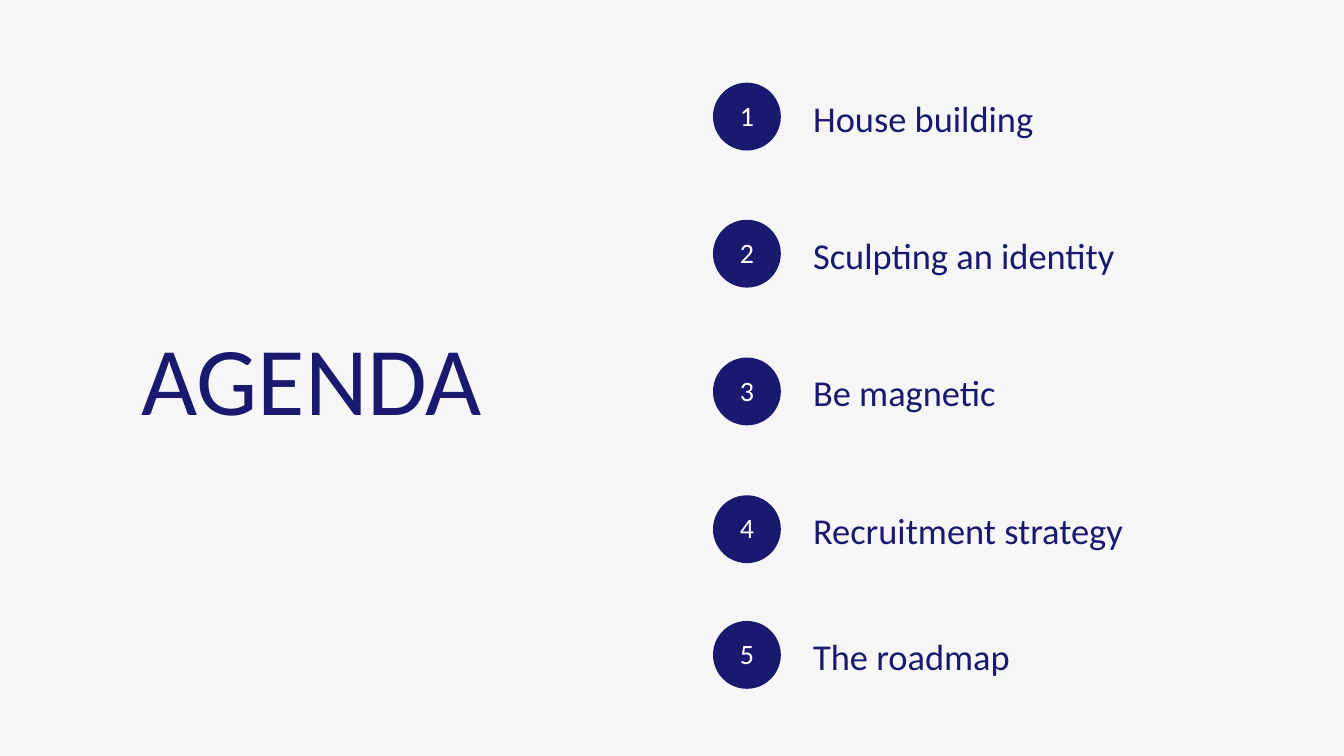
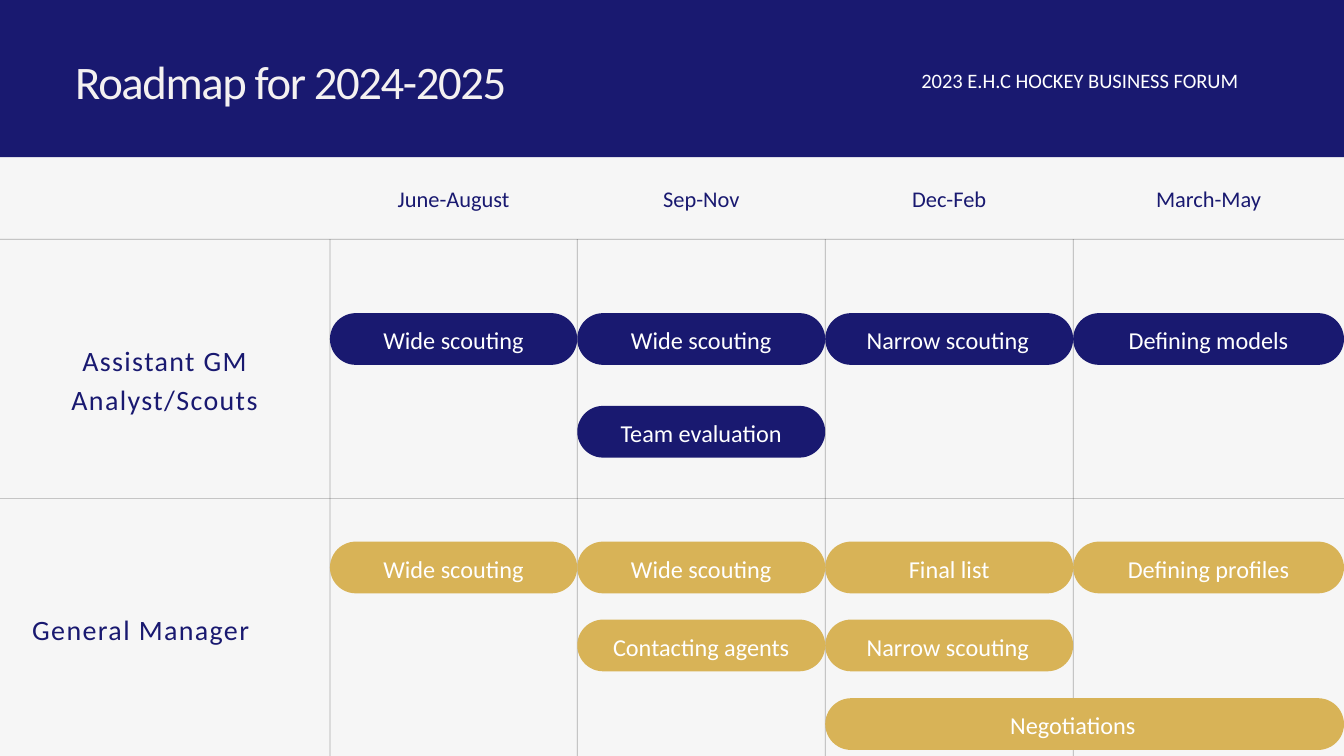
from pptx import Presentation
from pptx.dml.color import RGBColor as Rgb
from pptx.enum.shapes import MSO_CONNECTOR as Link, MSO_SHAPE as Kind
from pptx.enum.text import MSO_ANCHOR as Anchor, MSO_AUTO_SIZE as Auto, PP_ALIGN as Align
from pptx.oxml.ns import qn
from pptx.util import Emu, Pt
from lxml.etree import SubElement

PX = 9144  # 100 px to the inch
WIDE, HIGH = 2000, 1125
FONT = "Calibri"
HUE = {"navy": "191970", "gold": "D8B357", "white": "FFFFFF",
       "pale": "F6F6F6", "title": "F4F1F1", "line": "000000"}

# Topic and top of its circle
TOPICS = [("House building", 123), ("Sculpting an identity", 327),
          ("Be magnetic", 532), ("Recruitment strategy", 737),
          ("The roadmap", 924)]

EDGES = [491, 859, 1228, 1597, WIDE]
SEASONS = ["June-August", "Sep-Nov", "Dec-Feb", "March-May"]
RULES = [356, 742]
# Left, top, width, alignment, lines
ROLES = [(64, 503, 362, Align.CENTER, ["Assistant GM", "Analyst/Scouts"]),
         (48, 903, 394, Align.JUSTIFY, ["General Manager"])]
# Colour, top, tasks as (text, first column, columns spanned, right inset)
TASKS = [
    ("navy", 466, [("Wide scouting", 0, 1, 0), ("Wide scouting", 1, 1, 0),
                   ("Narrow scouting", 2, 1, 4), ("Defining models", 3, 1, 0)]),
    ("navy", 604, [("Team evaluation", 1, 1, 0)]),
    ("gold", 806, [("Wide scouting", 0, 1, 0), ("Wide scouting", 1, 1, 0),
                   ("Final list", 2, 1, 0), ("Defining profiles", 3, 1, 0)]),
    ("gold", 922, [("Contacting agents", 1, 1, 0), ("Narrow scouting", 2, 1, 4)]),
    ("gold", 1039, [("Negotiations", 2, 2, 35)]),
]


def px(*nums):
    return [Emu(round(n * PX)) for n in nums]


def rgb(name):
    return Rgb.from_string(HUE[name])


def write(shape, *lines, size, lead, hue="navy", align=Align.LEFT, track=0, inset=0):
    """Fill a shape with lines; lead is line spacing and track letter spacing, in points."""
    frame = shape.text_frame
    frame.word_wrap = True
    frame.margin_left = frame.margin_top = frame.margin_bottom = 0
    frame.margin_right = px(inset)[0]
    for i, line in enumerate(lines):
        para = frame.paragraphs[0] if i == 0 else frame.add_paragraph()
        para.alignment = align
        para.line_spacing = Pt(lead)
        run = para.add_run()
        run.text = line
        run.font.name, run.font.size = FONT, Pt(size)
        run.font.color.rgb = rgb(hue)
        if track:
            run.font._element.set("spc", str(round(track * 100)))
    return frame


def label(slide, box, *lines, **form):
    shape = slide.shapes.add_textbox(*px(*box))
    write(shape, *lines, **form).auto_size = Auto.SHAPE_TO_FIT_TEXT


def block(slide, kind, box, hue):
    shape = slide.shapes.add_shape(kind, *px(*box))
    shape.shadow.inherit = False
    shape.fill.solid()
    shape.fill.fore_color.rgb = rgb(hue)
    shape.line.fill.background()
    return shape


def badge(slide, kind, box, hue, word, **form):
    """Add a filled shape with white text in its middle."""
    shape = block(slide, kind, box, hue)
    if kind == Kind.ROUNDED_RECTANGLE:
        shape.adjustments[0] = 0.5
    frame = write(shape, word, hue="white", align=Align.CENTER, **form)
    frame.vertical_anchor = Anchor.MIDDLE


def rule(slide, *ends):
    """Draw a thin line at 30 % opacity."""
    line = slide.shapes.add_connector(Link.STRAIGHT, *px(*ends))
    line.line.width = Pt(0.75)
    line.line.color.rgb = rgb("line")
    props = line._element.spPr
    SubElement(next(props.iter(qn("a:srgbClr"))), qn("a:alpha"), val="30000")
    SubElement(props, qn("a:effectLst"))


def page(deck):
    slide = deck.slides.add_slide(deck.slide_layouts[6])
    slide.background.fill.solid()
    slide.background.fill.fore_color.rgb = rgb("pale")
    return slide


def agenda(slide):
    label(slide, (210, 488, 644, 161), "AGENDA", size=104, lead=114.4)
    for num, (topic, top) in enumerate(TOPICS, 1):
        badge(slide, Kind.OVAL, (1061, top, 101, 101), "navy", str(num), size=30, lead=33)
        label(slide, (1210, top + 14, 582, 69), topic, size=39, lead=50.7)


def roadmap(slide):
    for x in EDGES[:-1]:
        rule(slide, x, RULES[0], x, HIGH)
    for y in RULES:
        rule(slide, 0, y, WIDE, y)

    block(slide, Kind.RECTANGLE, (0, 0, WIDE, 234), "navy")
    label(slide, (112, 71, 830, 89), "Roadmap for 2024-2025",
          size=50, lead=65, hue="title", track=-1.5)
    label(slide, (1371, 95, 604, 40), "2023 E.H.C HOCKEY BUSINESS FORUM",
          size=22, lead=30.8, hue="white")

    for season, left, right in zip(SEASONS, EDGES, EDGES[1:]):
        label(slide, (left, 272, right - left, 42), season,
              size=24, lead=31.2, align=Align.CENTER)
    for left, top, width, align, lines in ROLES:
        label(slide, (left, top, width, 56 * len(lines)), *lines,
              size=30, lead=42, align=align, track=1.5)
    for hue, top, tasks in TASKS:
        for task, col, span, inset in tasks:
            left, right = EDGES[col], EDGES[col + span]
            badge(slide, Kind.ROUNDED_RECTANGLE, (left, top, right - left, 77),
                  hue, task, size=26, lead=33.8, inset=inset)


def main():
    deck = Presentation()
    deck.slide_width, deck.slide_height = px(WIDE, HIGH)
    agenda(page(deck))
    roadmap(page(deck))
    deck.save("out.pptx")


if __name__ == "__main__":
    main()
